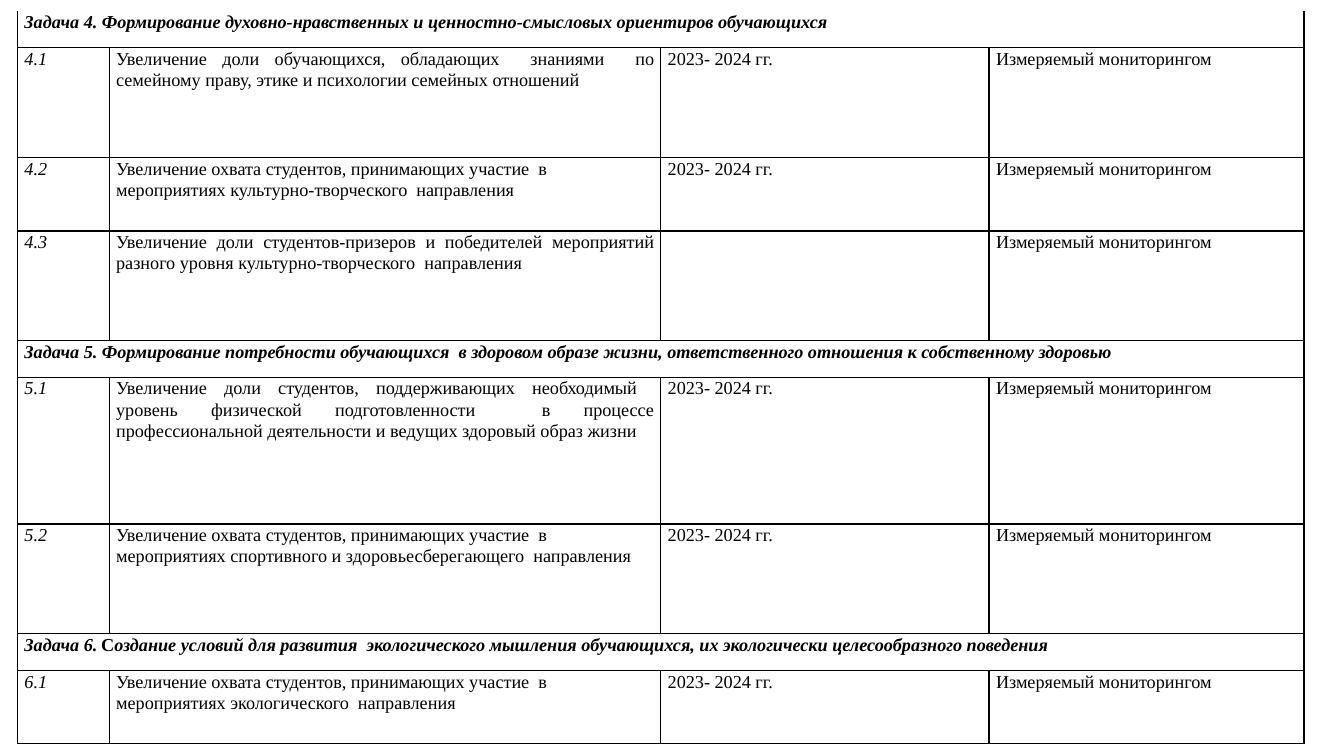
from dataclasses import dataclass

from lxml import etree
from pptx import Presentation
from pptx.dml.color import RGBColor
from pptx.enum.text import PP_ALIGN
from pptx.oxml.ns import qn
from pptx.table import _Cell
from pptx.util import Pt

LEFT, JUSTIFY = PP_ALIGN.LEFT, PP_ALIGN.JUSTIFY
FONT, BLACK = "Times New Roman", "000000"
SIZE = 13
ROW_UNIT = 26.17
COLUMN_WIDTHS = (65.5, 394, 234.5, 225)
PERIOD = "2023- 2024 гг."
SOURCE = "Измеряемый мониторингом"


@dataclass
class Goal:
    title: str
    # Upright part of the heading between its number and the rest
    initial: str = ""
    rest: str = ""
    units: int = 1


@dataclass
class Indicator:
    number: str
    text: str
    units: int
    align: PP_ALIGN = LEFT
    period: str = PERIOD


PLAN: list[Goal | Indicator] = [
    Goal("Задача 4. Формирование духовно-нравственных и ценностно-смысловых ориентиров обучающихся"),
    Indicator("4.1", "Увеличение доли обучающихся, обладающих  знаниями  по семейному праву, "
              "этике и психологии семейных отношений", 3, JUSTIFY),
    Indicator("4.2", "Увеличение охвата студентов, принимающих участие  в мероприятиях "
              "культурно-творческого  направления", 2),
    Indicator("4.3", "Увеличение доли студентов-призеров и победителей мероприятий разного уровня "
              "культурно-творческого  направления", 3, JUSTIFY, period=""),
    Goal("Задача 5. Формирование потребности обучающихся  в здоровом образе жизни, "
         "ответственного отношения к собственному здоровью"),
    Indicator("5.1", "Увеличение доли студентов, поддерживающих необходимый  уровень физической "
              "подготовленности  в процессе профессиональной деятельности и ведущих здоровый "
              "образ жизни", 4, JUSTIFY),
    Indicator("5.2", "Увеличение охвата студентов, принимающих участие  в мероприятиях спортивного "
              "и здоровьесберегающего  направления", 3),
    Goal("Задача 6.", "С", "оздание условий для развития  экологического мышления обучающихся, "
         "их экологически целесообразного поведения"),
    Indicator("6.1", "Увеличение охвата студентов, принимающих участие  в мероприятиях "
              "экологического  направления", 2),
]


def color(value: str) -> RGBColor:
    return RGBColor.from_string(value)


def write(cell: _Cell, text: str, *, size: float = SIZE, bold: bool = False,
          italic: bool = False, align: PP_ALIGN = LEFT) -> None:
    """Append a formatted run to the cell's paragraph."""
    if not text:
        return
    paragraph = cell.text_frame.paragraphs[0]
    paragraph.alignment = align
    paragraph.line_spacing = 1.07
    run = paragraph.add_run()
    run.text = text
    run.font.name = FONT
    run.font.size = Pt(size)
    run.font.bold = bold
    run.font.italic = italic
    run.font.color.rgb = color(BLACK)


def frame(cell: _Cell, sides: str) -> None:
    """Set insets, draw the given sides (L, R, T, B) and clear the fill."""
    cell.margin_left = cell.margin_right = Pt(5)
    cell.margin_top = cell.margin_bottom = Pt(0)
    properties = cell._tc.get_or_add_tcPr()
    for side in "LRTB":
        line = etree.SubElement(properties, qn(f"a:ln{side}"), w=str(Pt(1)))
        if side in sides:
            fill = etree.SubElement(line, qn("a:solidFill"))
            etree.SubElement(fill, qn("a:srgbClr"), val=BLACK)
        else:
            etree.SubElement(line, qn("a:noFill"))
    cell.fill.background()


def write_goal(cells: list[_Cell], goal: Goal) -> None:
    cells[0].merge(cells[-1])
    write(cells[0], goal.title, bold=True, italic=True)
    if goal.initial:
        write(cells[0], " ", size=11, bold=True)
        write(cells[0], goal.initial, bold=True)
        write(cells[0], goal.rest, bold=True, italic=True)


def write_indicator(cells: list[_Cell], indicator: Indicator) -> None:
    number, description, period, source = cells
    write(number, indicator.number, italic=True)
    write(description, indicator.text, align=indicator.align)
    write(period, indicator.period)
    write(source, SOURCE)


def main() -> None:
    deck = Presentation()
    deck.slide_width, deck.slide_height = Pt(960), Pt(540)
    slide = deck.slides.add_slide(deck.slide_layouts[6])

    # Table grid
    height = ROW_UNIT * sum(entry.units for entry in PLAN)
    plan = slide.shapes.add_table(len(PLAN), len(COLUMN_WIDTHS), Pt(12.5), Pt(8),
                                  Pt(sum(COLUMN_WIDTHS)), Pt(height)).table
    plan.first_row = plan.horz_banding = False
    for column, width in zip(plan.columns, COLUMN_WIDTHS):
        column.width = Pt(width)

    # Goals and their indicators
    for index, (row, entry) in enumerate(zip(plan.rows, PLAN)):
        row.height = Pt(ROW_UNIT * entry.units)
        cells = list(row.cells)
        if isinstance(entry, Goal):
            write_goal(cells, entry)
        else:
            write_indicator(cells, entry)
        for cell in cells:
            frame(cell, "LRB" if index == 0 else "LRTB")

    deck.save("out.pptx")


if __name__ == "__main__":
    main()
